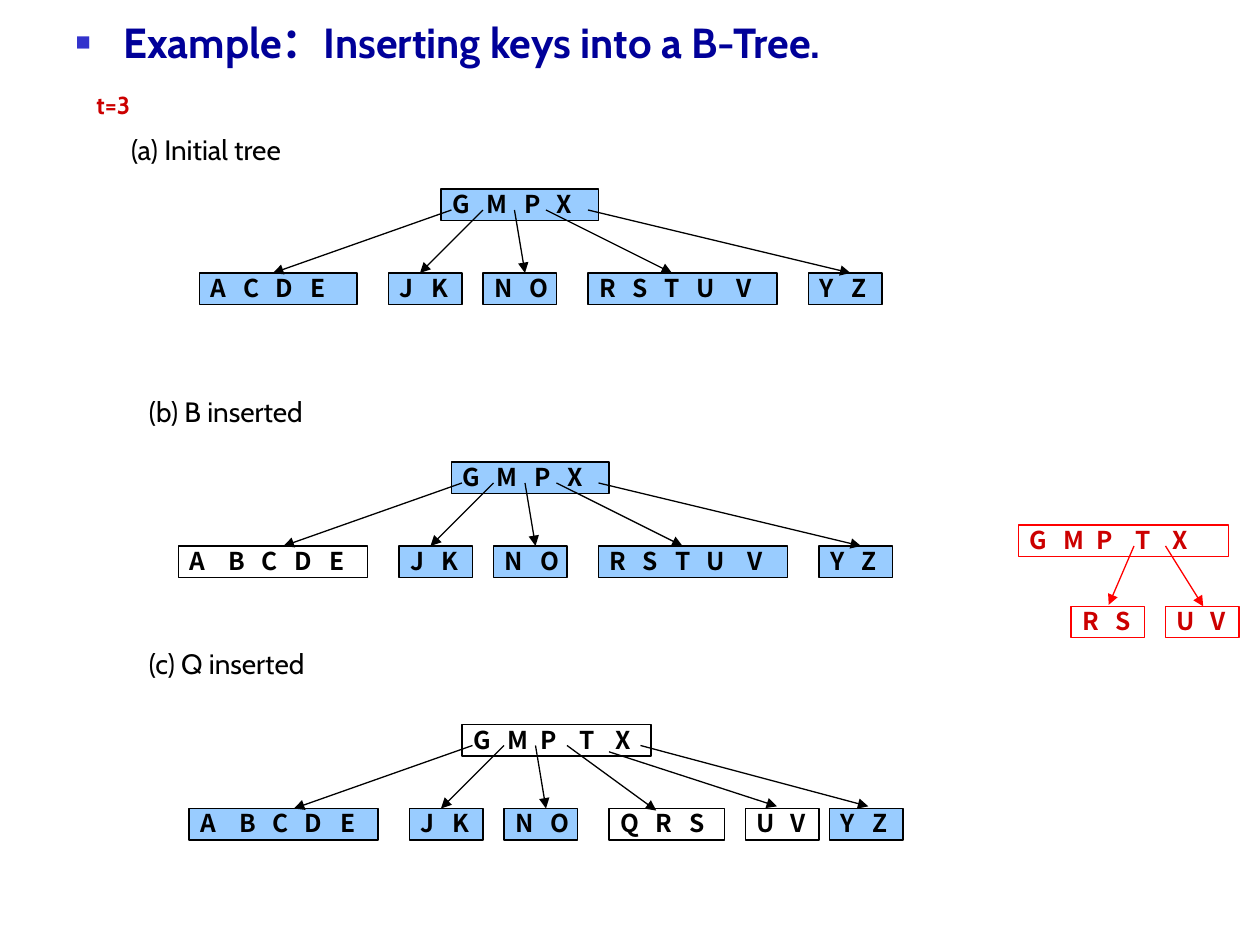
from collections import namedtuple
from dataclasses import dataclass

from lxml.etree import SubElement
from pptx import Presentation
from pptx.dml.color import RGBColor
from pptx.enum.shapes import MSO_CONNECTOR, MSO_SHAPE
from pptx.enum.text import MSO_ANCHOR, PP_ALIGN
from pptx.oxml.ns import qn
from pptx.util import Inches, Pt


@dataclass(frozen=True)
class Theme:
    heading: str = "000099"
    bullet: str = "3333CC"
    ink: str = "000000"
    node: str = "99CCFF"
    note: str = "CC0000"
    note_line: str = "FF0000"
    label_font: str = "Cabin"
    key_font: str = "Noto Sans CJK TC"
    heading_size: int = 24
    label_size: int = 16
    key_size: int = 14
    line_width: float = 0.75


THEME = Theme()
COLUMNS, ROWS = 120, 90
NODE_ROWS = 3
KEY_INSET = 0.09

# Where each key after the first begins, in inches from the node's left edge.
KEY_STOPS = {
    "ACDE": (0.35, 0.6, 0.88),
    "ABCDE": (0.4, 0.66, 0.92, 1.2),
    "RSTUV": (0.35, 0.61, 0.86, 1.18),
    "GMPX": (0.36, 0.66, 0.92),
    "GMPTX": (0.36, 0.62, 0.93, 1.22),
    "QRS": (0.37, 0.64),
    "JK": (0.34,),
    "NO": (0.37,),
    "RS": (0.35,),
    "UV": (0.36,),
    "YZ": (0.34,),
}

# Columns count from the tree's left edge, arrow starts from the root's top left.
Root = namedtuple("Root", "keys column width filled")
Leaf = namedtuple("Leaf", "keys column width filled start end", defaults=(None, None))
Arrow = namedtuple("Arrow", "column row")


def grid(units):
    """Length of a number of grid columns or rows, each a twelfth of an inch."""
    return Inches(units / 12)


def write(para, text, *, size, color, font, bold=False):
    span = para.add_run()
    span.text = text
    span.font.size = Pt(size)
    span.font.name = font
    span.font.bold = bold
    span.font.color.rgb = RGBColor.from_string(color)


def add_heading(page, text, left, top, width, height):
    page.shapes.title.element.getparent().remove(page.shapes.title.element)
    body = page.placeholders[1]
    body.left, body.top = grid(left), grid(top)
    body.width, body.height = grid(width), grid(height)
    para = body.text_frame.paragraphs[0]
    para.space_before = Pt(0.2 * THEME.heading_size)
    write(para, text, size=THEME.heading_size, color=THEME.heading,
          font=THEME.label_font, bold=True)
    props = para._p.get_or_add_pPr()
    props.set("marL", str(Inches(0.38)))
    props.set("indent", str(-Inches(0.38)))
    SubElement(SubElement(props, qn("a:buClr")), qn("a:srgbClr"), val=THEME.bullet)
    SubElement(props, qn("a:buSzPct"), val="60000")
    SubElement(props, qn("a:buChar"), char="■")


def add_label(page, text, left, top, width, height, **style):
    box = page.shapes.add_textbox(grid(left), grid(top), grid(width), grid(height))
    box.text_frame.word_wrap = False
    write(box.text_frame.paragraphs[0], text, font=THEME.label_font, **style)


def add_node(page, node, left, top, line, ink):
    box = page.shapes.add_shape(MSO_SHAPE.RECTANGLE, grid(left + node.column), grid(top),
                                grid(node.width), grid(NODE_ROWS))
    box.shadow.inherit = False
    if node.filled:
        box.fill.solid()
        box.fill.fore_color.rgb = RGBColor.from_string(THEME.node)
    else:
        box.fill.background()
    box.line.color.rgb = RGBColor.from_string(line)
    box.line.width = Pt(THEME.line_width)

    frame = box.text_frame
    frame.margin_left = Inches(KEY_INSET)
    frame.margin_top = frame.margin_right = frame.margin_bottom = 0
    frame.vertical_anchor = MSO_ANCHOR.TOP
    frame.word_wrap = False
    para = frame.paragraphs[0]
    para.alignment = PP_ALIGN.LEFT
    write(para, "\t".join(node.keys), size=THEME.key_size, color=ink,
          font=THEME.key_font, bold=True)
    stops = SubElement(para._p.get_or_add_pPr(), qn("a:tabLst"))
    for stop in KEY_STOPS[node.keys]:
        SubElement(stops, qn("a:tab"), pos=str(Inches(stop - KEY_INSET)), algn="l")


def add_arrow(page, start, end, color):
    arrow = page.shapes.add_connector(MSO_CONNECTOR.STRAIGHT, grid(start.column),
                                      grid(start.row), grid(end.column), grid(end.row))
    arrow.line.color.rgb = RGBColor.from_string(color)
    arrow.line.width = Pt(THEME.line_width)
    SubElement(arrow.line._get_or_add_ln(), qn("a:tailEnd"), type="triangle")
    SubElement(arrow._element.spPr, qn("a:effectLst"))


def add_tree(page, left, top, root, leaves, *, depth=8, line=THEME.ink, ink=THEME.ink):
    """Draw a root, its leaves `depth` rows below, and an arrow to each leaf."""
    add_node(page, root, left, top, line, ink)
    for leaf in leaves:
        add_node(page, leaf, left, top + depth, line, ink)
    for leaf in leaves:
        start = Arrow(left + root.column + leaf.start.column, top + leaf.start.row)
        end = Arrow(left + leaf.end.column, top + leaf.end.row)
        add_arrow(page, start, end, line)


def main():
    deck = Presentation()
    deck.slide_width, deck.slide_height = grid(COLUMNS), grid(ROWS)
    page = deck.slides.add_slide(deck.slide_layouts[1])

    add_heading(page, "Example：Inserting keys into a B-Tree.", 6, 1, 104, 68)
    add_label(page, "t=3", 8, 8, 6.8, 4, size=THEME.key_size, color=THEME.note, bold=True)
    for text, left, top in (("(a) Initial tree", 11.3, 12),
                            ("(b) B inserted", 13, 37),
                            ("(c) Q inserted", 13, 61)):
        add_label(page, text, left, top, 18.6, 4.4, size=THEME.label_size, color=THEME.ink)

    first = Leaf("ACDE", 0, 15, True, Arrow(1, 2), Arrow(7, 8))
    grown = first._replace(keys="ABCDE", column=-3, width=18)
    middle = [Leaf("JK", 18, 7, True, Arrow(4, 2), Arrow(21, 8)),
              Leaf("NO", 27, 7, True, Arrow(7, 2), Arrow(31, 8))]
    full = Leaf("RSTUV", 37, 18, True, Arrow(10, 2), Arrow(45, 8))
    last = Leaf("YZ", 58, 7, True, Arrow(14, 2), Arrow(62, 8))
    split = [Leaf("QRS", 37, 11, False, Arrow(10, 2), Arrow(41.5, 8.2)),
             Leaf("UV", 50, 7, False, Arrow(14, 2.6), Arrow(53, 7.8))]
    moved_last = last._replace(start=Arrow(17, 2), end=Arrow(61.7, 7.8))

    root = Root("GMPX", 23, 15, True)
    add_tree(page, 19, 18, root, [first, *middle, full, last])
    add_tree(page, 20, 44, root, [grown._replace(filled=False), *middle, full, last])
    add_tree(page, 21, 69, Root("GMPTX", 23, 18, False),
             [grown, *middle, *split, moved_last])
    add_tree(page, 97, 50, Root("GMPTX", 0, 20, False),
             [Leaf("RS", 5, 7, False, Arrow(11, 2), Arrow(8.6, 7.6)),
              Leaf("UV", 14, 7, False, Arrow(14, 2), Arrow(17.6, 7.75))],
             depth=7.75, line=THEME.note_line, ink=THEME.note)

    deck.save("out.pptx")


if __name__ == "__main__":
    main()
